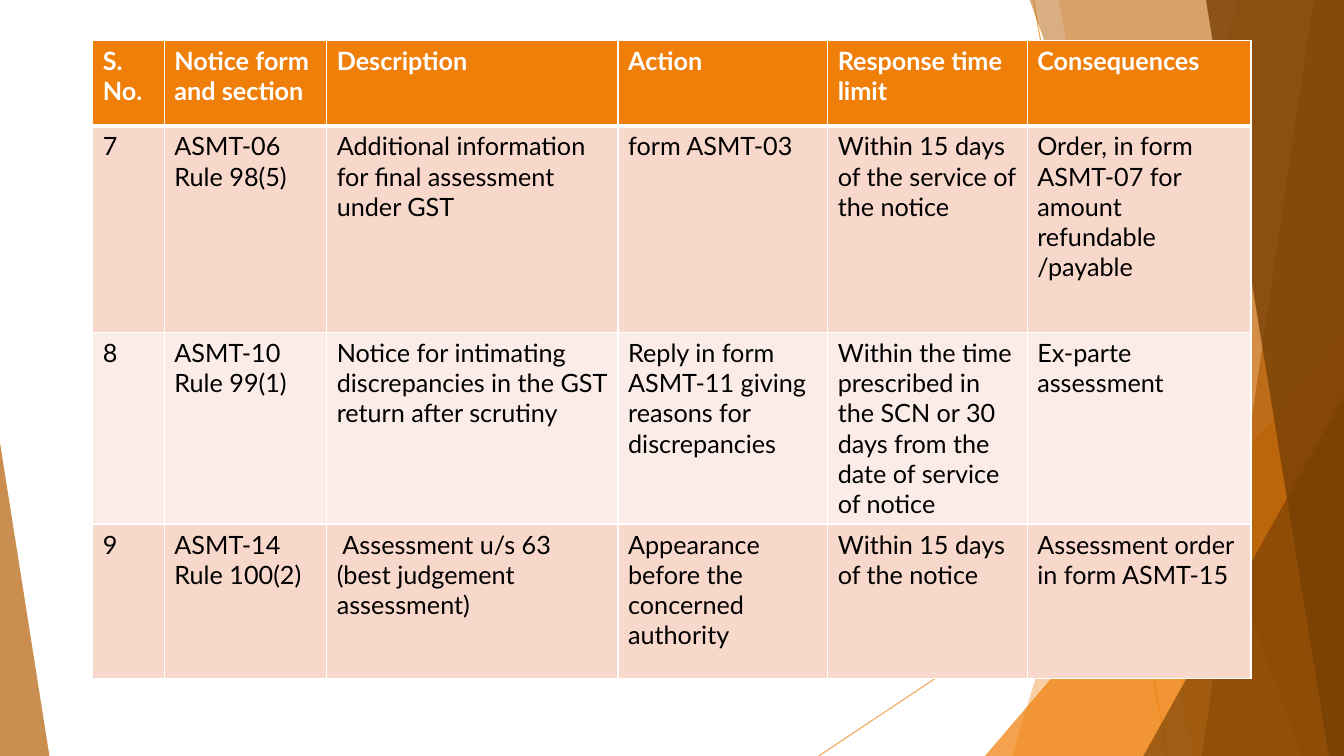
"""Build a slide with a table of GST assessment notices over a faceted backdrop."""
from dataclasses import dataclass

from lxml import etree
from pptx import Presentation
from pptx import util as u
from pptx.dml.color import RGBColor
from pptx.enum import shapes
from pptx.oxml import ns

SLIDE_WIDTH = u.Inches(13.33)
SLIDE_HEIGHT = u.Inches(7.5)


@dataclass(frozen=True)
class Theme:
    orange: str = "F07F09"
    rust: str = "B45F07"
    brown: str = "784004"
    white: str = "FFFFFF"
    black: str = "000000"
    band_dark: str = "F9D8CC"
    band_light: str = "FCECE7"
    font: str = "Lato"
    text_size: float = 18
    hairline: float = 0.75
    border: float = 1
    header_rule: float = 3


THEME = Theme()


@dataclass(frozen=True)
class Ray:
    start: tuple[float, float]
    end: tuple[float, float]


@dataclass(frozen=True)
class Facet:
    top_x: float
    bottom_x: float
    color: str
    opacity: int


@dataclass(frozen=True)
class Wedge:
    left: float
    top: float
    right: float
    apex: float
    color: str
    opacity: int


RAYS = [Ray((76.89, 0), (86.87, 100)), Ray((100, 53.73), (60.92, 100))]
BACKDROP = [
    Facet(92.12, 75.32, THEME.orange, 36),
    Facet(78.77, 88.75, THEME.orange, 20),
    Wedge(73.29, 44.4, 100, 1, THEME.orange, 72),
    Facet(76.59, 96.85, THEME.rust, 50),
    Facet(97.75, 89.42, THEME.rust, 70),
    Facet(89.72, 98.87, THEME.brown, 80),
    Wedge(85.07, 52.4, 100, 1, THEME.brown, 66),
    Wedge(0, 58.53, 3.68, 0, THEME.rust, 70),
]
FACET_TOP = -0.13

TABLE_LEFT, TABLE_TOP = 6.9, 5.33
COLUMN_WIDTHS = [5.33, 12.08, 21.68, 15.6, 14.85, 16.65]
ROW_HEIGHTS = [11.33, 27.33, 25.07, 20.4]
NOTICES = [
    ["S. No.", "Notice form and section", "Description", "Action",
     "Response time limit", "Consequences"],
    ["7", "ASMT-06 Rule 98(5)",
     "Additional information for final assessment under GST",
     "form ASMT-03", "Within 15 days of the service of the notice",
     "Order, in form ASMT-07 for amount refundable /payable"],
    ["8", "ASMT-10 Rule 99(1)",
     "Notice for intimating discrepancies in the GST return after scrutiny",
     "Reply in form ASMT-11 giving reasons for discrepancies",
     "Within the time prescribed in the SCN or 30 days from the date of service of notice",
     "Ex-parte assessment"],
    ["9", "ASMT-14 Rule 100(2)",
     " Assessment u/s 63 (best judgement assessment)",
     "Appearance before the concerned authority",
     "Within 15 days of the notice", "Assessment order in form ASMT-15"],
]


def across(percent: float) -> int:
    return round(SLIDE_WIDTH * percent / 100)


def down(percent: float) -> int:
    return round(SLIDE_HEIGHT * percent / 100)


def set_opacity(element, percent: int) -> None:
    for color in element.iter(ns.qn("a:srgbClr")):
        etree.SubElement(color, ns.qn("a:alpha"), val=str(percent * 1000))


def draw_ray(slide, ray: Ray) -> None:
    connector = slide.shapes.add_connector(
        shapes.MSO_CONNECTOR.STRAIGHT,
        across(ray.start[0]), down(ray.start[1]), across(ray.end[0]), down(ray.end[1]))
    connector.line.color.rgb = RGBColor.from_string(THEME.orange)
    connector.line.width = u.Pt(THEME.hairline)
    properties = connector._element.spPr
    set_opacity(properties, 70)
    etree.SubElement(properties, ns.qn("a:effectLst"))


def draw_facet(slide, facet: Facet):
    top, bottom = down(FACET_TOP), down(100)
    builder = slide.shapes.build_freeform(across(facet.top_x), top, scale=1.0)
    builder.add_line_segments(
        [(across(100), top), (across(100), bottom), (across(facet.bottom_x), bottom)],
        close=True)
    return builder.convert_to_shape()


def draw_wedge(slide, wedge: Wedge):
    shape = slide.shapes.add_shape(
        shapes.MSO_SHAPE.ISOSCELES_TRIANGLE, across(wedge.left), down(wedge.top),
        across(wedge.right - wedge.left), down(100 - wedge.top))
    shape.adjustments[0] = wedge.apex
    return shape


def draw_backdrop(slide) -> None:
    for ray in RAYS:
        draw_ray(slide, ray)
    for piece in BACKDROP:
        draw = draw_facet if isinstance(piece, Facet) else draw_wedge
        shape = draw(slide, piece)
        shape.shadow.inherit = False
        shape.line.fill.background()
        shape.fill.solid()
        shape.fill.fore_color.rgb = RGBColor.from_string(piece.color)
        set_opacity(shape._element.spPr, piece.opacity)


def set_borders(cell, row_index: int) -> None:
    rules = {
        "a:lnL": THEME.border,
        "a:lnR": THEME.border,
        "a:lnT": THEME.header_rule if row_index == 1 else THEME.border,
        "a:lnB": THEME.header_rule if row_index == 0 else THEME.border,
    }
    properties = cell._tc.get_or_add_tcPr()
    for position, (tag, width) in enumerate(rules.items()):
        line = etree.Element(ns.qn(tag), w=str(u.Pt(width)))
        fill = etree.SubElement(line, ns.qn("a:solidFill"))
        etree.SubElement(fill, ns.qn("a:srgbClr"), val=THEME.white)
        properties.insert(position, line)


def fill_cell(cell, words: str, row_index: int) -> None:
    is_header = row_index == 0
    band = THEME.band_dark if row_index % 2 else THEME.band_light
    cell.fill.solid()
    cell.fill.fore_color.rgb = RGBColor.from_string(THEME.orange if is_header else band)
    run = cell.text_frame.paragraphs[0].add_run()
    run.text = words
    run.font.name = THEME.font
    run.font.size = u.Pt(THEME.text_size)
    run.font.bold = is_header
    run.font.color.rgb = RGBColor.from_string(THEME.white if is_header else THEME.black)
    set_borders(cell, row_index)


def draw_table(slide) -> None:
    table = slide.shapes.add_table(
        len(ROW_HEIGHTS), len(COLUMN_WIDTHS), across(TABLE_LEFT), down(TABLE_TOP),
        across(sum(COLUMN_WIDTHS)), down(sum(ROW_HEIGHTS))).table
    for column, width in zip(table.columns, COLUMN_WIDTHS):
        column.width = across(width)
    for row_index, (row, height) in enumerate(zip(table.rows, ROW_HEIGHTS)):
        row.height = down(height)
        for cell, words in zip(row.cells, NOTICES[row_index]):
            fill_cell(cell, words, row_index)


def main() -> None:
    presentation = Presentation()
    presentation.slide_width = SLIDE_WIDTH
    presentation.slide_height = SLIDE_HEIGHT
    slide = presentation.slides.add_slide(presentation.slide_layouts[6])
    draw_backdrop(slide)
    draw_table(slide)
    presentation.save("out.pptx")


if __name__ == "__main__":
    main()
